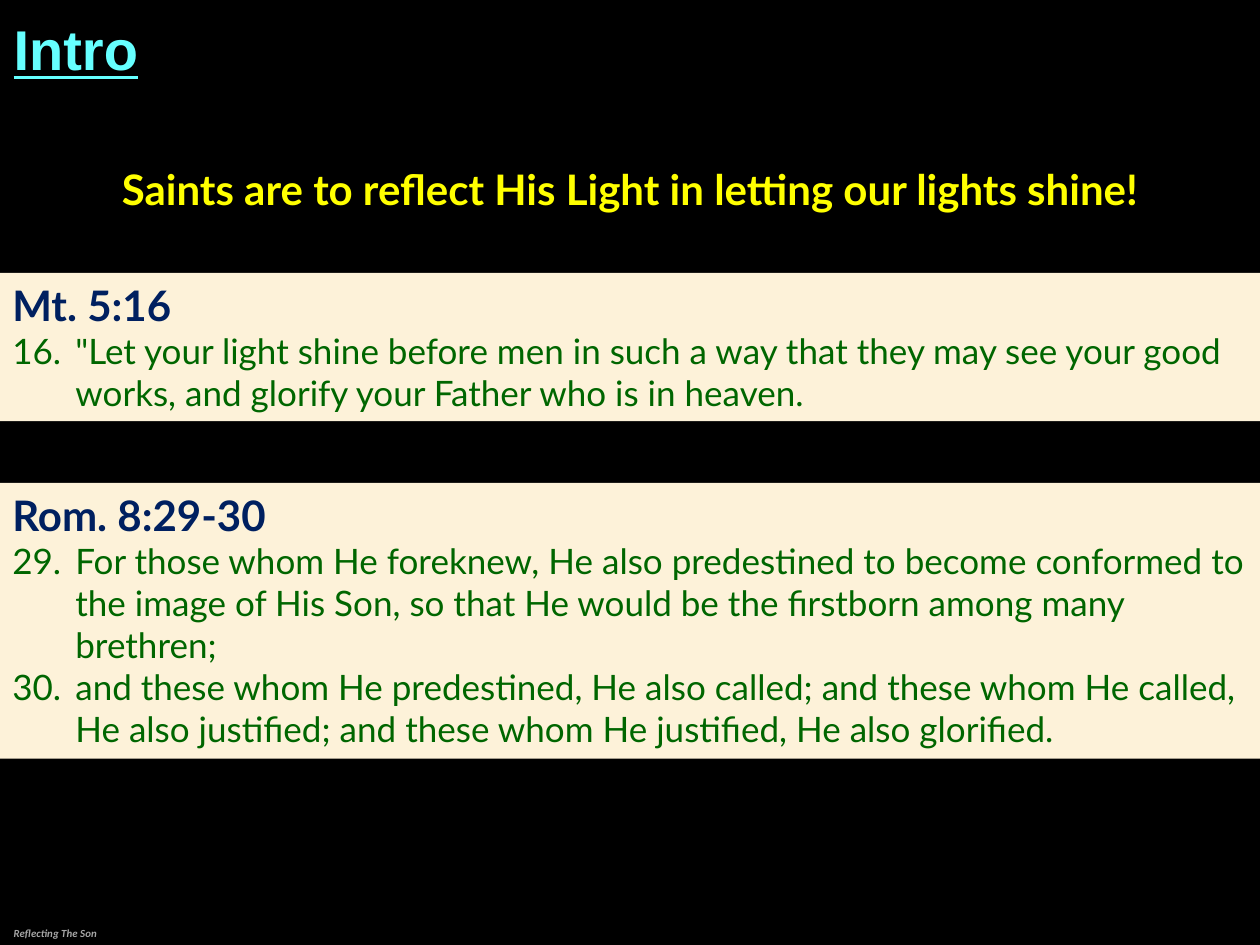
import pptx
import pptx.dml.color
import pptx.enum.shapes
import pptx.enum.text
import pptx.util
from dataclasses import dataclass

Pt = pptx.util.Pt
ALIGN = pptx.enum.text.PP_ALIGN
ANCHOR = pptx.enum.text.MSO_ANCHOR


@dataclass(frozen=True)
class Style:
    font: str
    size: float
    color: str
    bold: bool = False
    italic: bool = False
    underline: bool = False


@dataclass(frozen=True)
class Theme:
    background: str = "000000"
    panel: str = "FDF2D9"
    hanging: float = 36
    title: Style = Style("Arial", 32, "66FFFF", bold=True, underline=True)
    message: Style = Style("Lato", 24, "FFFF00", bold=True)
    reference: Style = Style("Lato", 24, "002060", bold=True)
    verse: Style = Style("Lato", 20, "006600")
    footer: Style = Style("Calibri", 6.2, "A6A6A6", bold=True, italic=True)


THEME = Theme()


def rgb(value):
    return pptx.dml.color.RGBColor.from_string(value)


def prepare_frame(shape, anchor=ANCHOR.TOP):
    frame = shape.text_frame
    frame.word_wrap = True
    frame.vertical_anchor = anchor
    return frame


def write(paragraph, text, style, align=ALIGN.LEFT, hanging=0):
    paragraph.alignment = align
    if hanging:
        properties = paragraph._p.get_or_add_pPr()
        properties.set("marL", str(Pt(hanging)))
        properties.set("indent", str(-Pt(hanging)))
    run = paragraph.add_run()
    run.text = text
    font = run.font
    font.name, font.size = style.font, Pt(style.size)
    font.bold, font.italic, font.underline = style.bold, style.italic, style.underline
    font.color.rgb = rgb(style.color)


def add_line(slide, box, text, style, anchor=ANCHOR.TOP, align=ALIGN.LEFT, hanging=0):
    """A text box holding one paragraph."""
    shape = slide.shapes.add_textbox(*map(Pt, box))
    paragraph = prepare_frame(shape, anchor).paragraphs[0]
    write(paragraph, text, style, align, hanging)
    return paragraph


def add_title(slide, box, text):
    paragraph = add_line(slide, box, text, THEME.title, ANCHOR.BOTTOM)
    paragraph.space_before = Pt(4)


def add_message(slide, box, text):
    add_line(slide, box, text, THEME.message, align=ALIGN.CENTER, hanging=THEME.hanging)


def add_footer(slide, box, text):
    add_line(slide, box, text, THEME.footer, ANCHOR.MIDDLE)


def add_passage(slide, box, reference, verses):
    """A full-width panel with a reference above its numbered verses."""
    panel = slide.shapes.add_shape(
        pptx.enum.shapes.MSO_SHAPE.RECTANGLE, *map(Pt, box))
    panel.shadow.inherit = False
    panel.fill.solid()
    panel.fill.fore_color.rgb = rgb(THEME.panel)
    panel.line.fill.background()
    frame = prepare_frame(panel)
    write(frame.paragraphs[0], reference, THEME.reference, hanging=THEME.hanging)
    for number, verse in verses:
        write(frame.add_paragraph(), f"{number}.\t{verse}", THEME.verse,
              hanging=THEME.hanging)


def main():
    presentation = pptx.Presentation()
    width, height = 720, 540
    presentation.slide_width, presentation.slide_height = Pt(width), Pt(height)
    slide = presentation.slides.add_slide(presentation.slide_layouts[6])
    slide.background.fill.solid()
    slide.background.fill.fore_color.rgb = rgb(THEME.background)

    # Footer and heading
    add_footer(slide, (0.75, 527, 288, 13), "Reflecting The Son")
    add_title(slide, (0.75, 1.5, width, 49), "Intro")
    add_message(slide, (0, 90, width, 36),
                "Saints are to reflect His Light in letting our lights shine!")

    # Scripture passages
    add_passage(slide, (0, 156, width, 84.75), "Mt. 5:16", [
        (16, '"Let your light shine before men in such a way that they may see '
             "your good works, and glorify your Father who is in heaven."),
    ])
    add_passage(slide, (0, 276, width, 157.5), "Rom. 8:29-30", [
        (29, "For those whom He foreknew, He also predestined to become conformed "
             "to the image of His Son, so that He would be the firstborn among "
             "many brethren;"),
        (30, "and these whom He predestined, He also called; and these whom He "
             "called, He also justified; and these whom He justified, He also "
             "glorified."),
    ])

    presentation.save("out.pptx")


if __name__ == "__main__":
    main()
